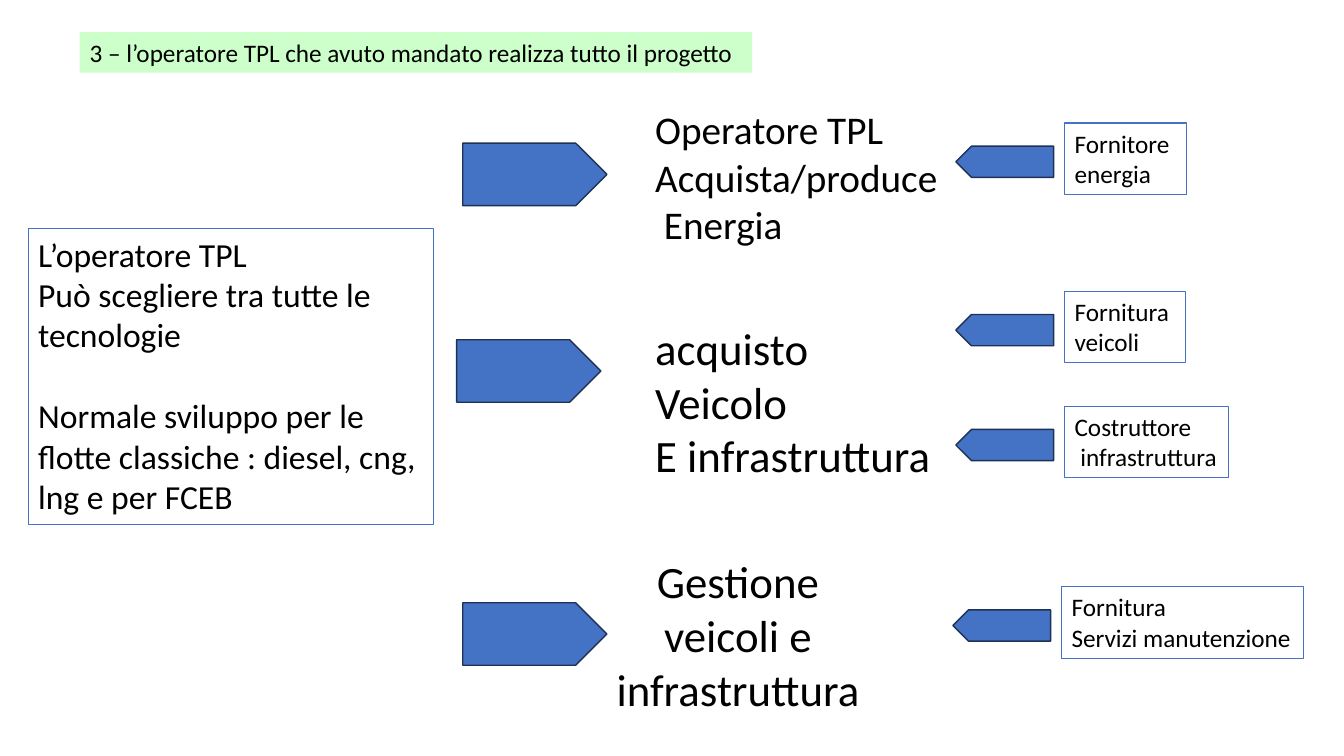
from pptx import Presentation
from pptx.dml.color import RGBColor
from pptx.enum.shapes import MSO_SHAPE
from pptx.enum.text import MSO_ANCHOR, PP_ALIGN
from pptx.util import Inches, Pt

WIDTH, HEIGHT = 13.33, 7.5
BLUE, NAVY, GREEN, WHITE, BLACK = "4472C4", "1E3256", "CCFFC9", "FFFFFF", "000000"

TITLE = ["3 – l’operatore TPL che avuto mandato realizza tutto il progetto"]
OPERATOR = [
    "L’operatore TPL",
    "Può scegliere tra tutte le tecnologie",
    "Normale sviluppo per le flotte classiche : diesel, cng, lng e per FCEB",
]
ACTIVITIES = [
    (["Operatore TPL", "Acquista/produce", " Energia"], 1.0, 3.04, 1.51, 28),
    (["acquisto", "Veicolo", "E infrastruttura"], 3.13, 2.98, 1.72, 32),
]
MANAGEMENT = ["Gestione veicoli e infrastruttura"]
SUPPLIERS = [
    (["Fornitore", "energia"], 10.56, 1.22, 1.21),
    (["Fornitura", "veicoli"], 10.56, 2.89, 1.2),
    (["Costruttore", " infrastruttura"], 10.56, 4.03, 1.63),
    (["Fornitura", "Servizi manutenzione"], 10.53, 5.82, 2.4),
]
STEP_ARROWS = [(4.59, 1.42), (4.53, 3.37), (4.59, 5.98)]
STEP_SIZE = (1.43, 0.62)
SUPPLIER_HEIGHT = 0.71
SUPPLY_SIZE = (0.97, 0.31)
SUPPLY_GAP = 0.11
ACTIVITY_LEFT = 6.4


def color(value):
    return RGBColor.from_string(value)


def apply(target, values):
    for name, value in values.items():
        setattr(target, name, value)


def add_box(slide, kind, place, fill=None, line=None, line_width=0.75):
    shape = slide.shapes.add_shape(kind, *map(Inches, place))
    shape.shadow.inherit = False
    if fill:
        shape.fill.solid()
        shape.fill.fore_color.rgb = color(fill)
    else:
        shape.fill.background()
    if line:
        shape.line.color.rgb = color(line)
        shape.line.width = Pt(line_width)
    else:
        shape.line.fill.background()
    return shape


def write(shape, lines, size, wrap=True, anchor=MSO_ANCHOR.TOP, alignment=PP_ALIGN.LEFT):
    frame = shape.text_frame
    apply(frame, {"text": "\n".join(lines), "word_wrap": wrap, "vertical_anchor": anchor})
    for paragraph in frame.paragraphs:
        paragraph.alignment = alignment
        apply(paragraph.font, {"name": "Calibri", "size": Pt(size)})
        paragraph.font.color.rgb = color(BLACK)


def add_arrow(slide, left, top, size, rotation=0):
    arrow = add_box(slide, MSO_SHAPE.PENTAGON, (left, top, *size), BLUE, NAVY, 1)
    arrow.rotation = rotation


def build():
    presentation = Presentation()
    apply(presentation, {"slide_width": Inches(WIDTH), "slide_height": Inches(HEIGHT)})
    slide = presentation.slides.add_slide(presentation.slide_layouts[6])

    management = add_box(slide, MSO_SHAPE.OVAL, (5.31, 5.25, 4.02, 2.09), None, WHITE, 1)
    write(management, MANAGEMENT, 32, anchor=MSO_ANCHOR.MIDDLE, alignment=PP_ALIGN.CENTER)

    title = add_box(slide, MSO_SHAPE.RECTANGLE, (0.79, 0.32, 6.67, 0.4), GREEN)
    write(title, TITLE, 18)

    operator = add_box(slide, MSO_SHAPE.RECTANGLE, (0.28, 2.27, 4.02, 2.93), None, BLUE)
    write(operator, OPERATOR, 24)
    operator.text_frame.paragraphs[-1].space_before = Pt(29)

    for lines, top, width, height, size in ACTIVITIES:
        place = map(Inches, (ACTIVITY_LEFT, top, width, height))
        write(slide.shapes.add_textbox(*place), lines, size, wrap=False)

    for left, top in STEP_ARROWS:
        add_arrow(slide, left, top, STEP_SIZE)

    for lines, left, top, width in SUPPLIERS:
        place = (left, top, width, SUPPLIER_HEIGHT)
        write(add_box(slide, MSO_SHAPE.RECTANGLE, place, None, BLUE), lines, 18, wrap=False)
        arrow_left = left - SUPPLY_GAP - SUPPLY_SIZE[0]
        arrow_top = top + 0.03 + (SUPPLIER_HEIGHT - SUPPLY_SIZE[1]) / 2
        add_arrow(slide, arrow_left, arrow_top, SUPPLY_SIZE, 180)

    presentation.save("out.pptx")


if __name__ == "__main__":
    build()
